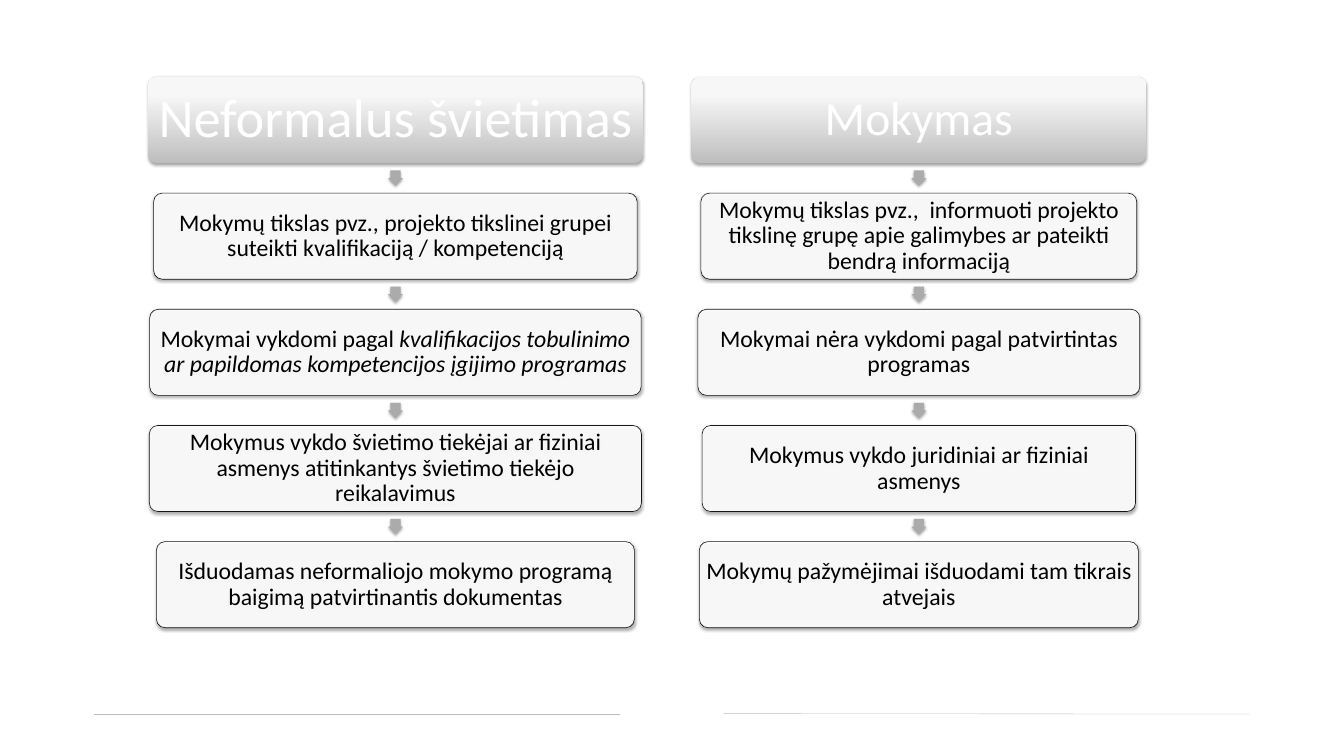
"""Build a slide comparing non-formal education and training as two step columns."""
import copy

import pptx
import pptx.dml.color
import pptx.enum.shapes
import pptx.enum.text
import pptx.oxml
import pptx.oxml.ns
import pptx.util

Cm = pptx.util.Cm
Pt = pptx.util.Pt
SHAPES = pptx.enum.shapes.MSO_SHAPE

COLUMNS = [
    {
        "center": 16.43,
        "header": ("Neformalus švietimas", 20.57, 64),
        "steps": [
            (20.09, ["Mokymų tikslas pvz., projekto tikslinei grupei suteikti kvalifikaciją / kompetenciją"]),
            (20.42, ["Mokymai vykdomi pagal ",
                     "kvalifikacijos tobulinimo ar papildomas kompetencijos įgijimo programas"]),
            (20.45, ["Mokymus vykdo švietimo tiekėjai ar fiziniai asmenys atitinkantys švietimo tiekėjo reikalavimus"]),
            (19.86, ["Išduodamas neformaliojo mokymo programą baigimą patvirtinantis dokumentas"]),
        ],
    },
    {
        "center": 38.18,
        "header": ("Mokymas", 18.9, 56),
        "steps": [
            (18.11, ["Mokymų tikslas pvz.,  informuoti projekto tikslinę grupę apie galimybes ar pateikti bendrą informaciją"]),
            (18.36, ["Mokymai nėra vykdomi pagal patvirtintas programas"]),
            (18.01, ["Mokymus vykdo juridiniai ar fiziniai asmenys"]),
            (18.24, ["Mokymų pažymėjimai išduodami tam tikrais atvejais"]),
        ],
    },
]
FOOTER_RULES = [(3.91, 29.71, 25.76, 29.71), (30.07, 29.67, 51.92, 29.69)]
HEADER_GRADIENT = [(0, "BEBEBE"), (0.8, "F7F7F7"), (1, "F8F8F8")]
SLIDE_SIZE = (1583, 891)
TOP, BOX_HEIGHT, PITCH = 3.2, 3.58, 4.83
ARROW_SIZE = 0.63
HEADER_INSET, STEP_INSET = 0.23, 0.11
SHADOW_XML = (
    f'<a:effectLst {pptx.oxml.ns.nsdecls("a")}>'
    '<a:outerShdw blurRad="40000" dist="23000" dir="5400000" rotWithShape="0">'
    '<a:srgbClr val="000000"><a:alpha val="35000"/></a:srgbClr>'
    '</a:outerShdw></a:effectLst>'
)


def color(value):
    return pptx.dml.color.RGBColor.from_string(value)


def set_effects(shape, xml):
    properties = shape._element.spPr
    for effects in properties.findall(pptx.oxml.ns.qn("a:effectLst")):
        properties.remove(effects)
    properties.append(pptx.oxml.parse_xml(xml))


def make_translucent(shape):
    alpha = f'<a:alpha {pptx.oxml.ns.nsdecls("a")} val="90000"/>'
    for solid in shape._element.spPr.iter(pptx.oxml.ns.qn("a:solidFill")):
        solid[0].append(pptx.oxml.parse_xml(alpha))


def fill_header(shape):
    shape.fill.gradient()
    shape.fill.gradient_angle = 90
    stop_list = shape._element.spPr.find(".//" + pptx.oxml.ns.qn("a:gsLst"))
    stop_list.append(copy.deepcopy(stop_list[-1]))
    for stop, (position, value) in zip(shape.fill.gradient_stops, HEADER_GRADIENT):
        stop.position = position
        stop.color.rgb = color(value)
    shape.line.fill.background()


def fill_step(shape):
    shape.fill.solid()
    shape.fill.fore_color.rgb = color("FFFFFF")
    shape.line.color.rgb = color("000000")
    shape.line.width = Pt(0.75)
    make_translucent(shape)


def write(shape, texts, size, text_color, inset):
    frame = shape.text_frame
    frame.word_wrap = True
    frame.vertical_anchor = pptx.enum.text.MSO_ANCHOR.MIDDLE
    frame.margin_left = frame.margin_right = Cm(inset)
    frame.margin_top = frame.margin_bottom = Cm(inset)
    paragraph = frame.paragraphs[0]
    paragraph.alignment = pptx.enum.text.PP_ALIGN.CENTER
    paragraph.line_spacing = 0.9
    for index, text in enumerate(texts):
        run = paragraph.add_run()
        run.text = text
        run.font.name = "Calibri"
        run.font.size = Pt(size)
        run.font.italic = index > 0
        run.font.color.rgb = color(text_color)


def add_box(slide, center, row, width):
    shape = slide.shapes.add_shape(
        SHAPES.ROUNDED_RECTANGLE, Cm(center - width / 2), Cm(TOP + row * PITCH),
        Cm(width), Cm(BOX_HEIGHT))
    shape.adjustments[0] = 0.1
    return shape


def add_arrow(slide, center, row):
    middle = TOP + row * PITCH - (PITCH - BOX_HEIGHT) / 2
    arrow = slide.shapes.add_shape(
        SHAPES.RIGHT_ARROW, Cm(center - ARROW_SIZE / 2), Cm(middle - ARROW_SIZE / 2),
        Cm(ARROW_SIZE), Cm(ARROW_SIZE))
    arrow.rotation = 90
    arrow.adjustments[0] = 0.67
    arrow.adjustments[1] = 0.5
    arrow.fill.solid()
    arrow.fill.fore_color.rgb = color("ABABAB")
    arrow.line.fill.background()
    set_effects(arrow, SHADOW_XML)


def add_column(slide, column):
    center = column["center"]
    title, width, size = column["header"]
    header = add_box(slide, center, 0, width)
    fill_header(header)
    set_effects(header, SHADOW_XML)
    write(header, [title], size, "FFFFFF", HEADER_INSET)
    for row, (width, texts) in enumerate(column["steps"], start=1):
        add_arrow(slide, center, row)
        step = add_box(slide, center, row, width)
        fill_step(step)
        set_effects(step, SHADOW_XML)
        write(step, texts, 28, "000000", STEP_INSET)


def add_footer_rule(slide, ends):
    rule = slide.shapes.add_connector(
        pptx.enum.shapes.MSO_CONNECTOR.STRAIGHT, *(Cm(value) for value in ends))
    rule.line.color.rgb = color("BEBEBE")
    rule.line.width = Pt(0.4)
    set_effects(rule, f'<a:effectLst {pptx.oxml.ns.nsdecls("a")}/>')


def main():
    presentation = pptx.Presentation()
    presentation.slide_width, presentation.slide_height = map(Pt, SLIDE_SIZE)
    slide = presentation.slides.add_slide(presentation.slide_layouts[6])
    for ends in FOOTER_RULES:
        add_footer_rule(slide, ends)
    for column in COLUMNS:
        add_column(slide, column)
    presentation.save("out.pptx")


if __name__ == "__main__":
    main()
